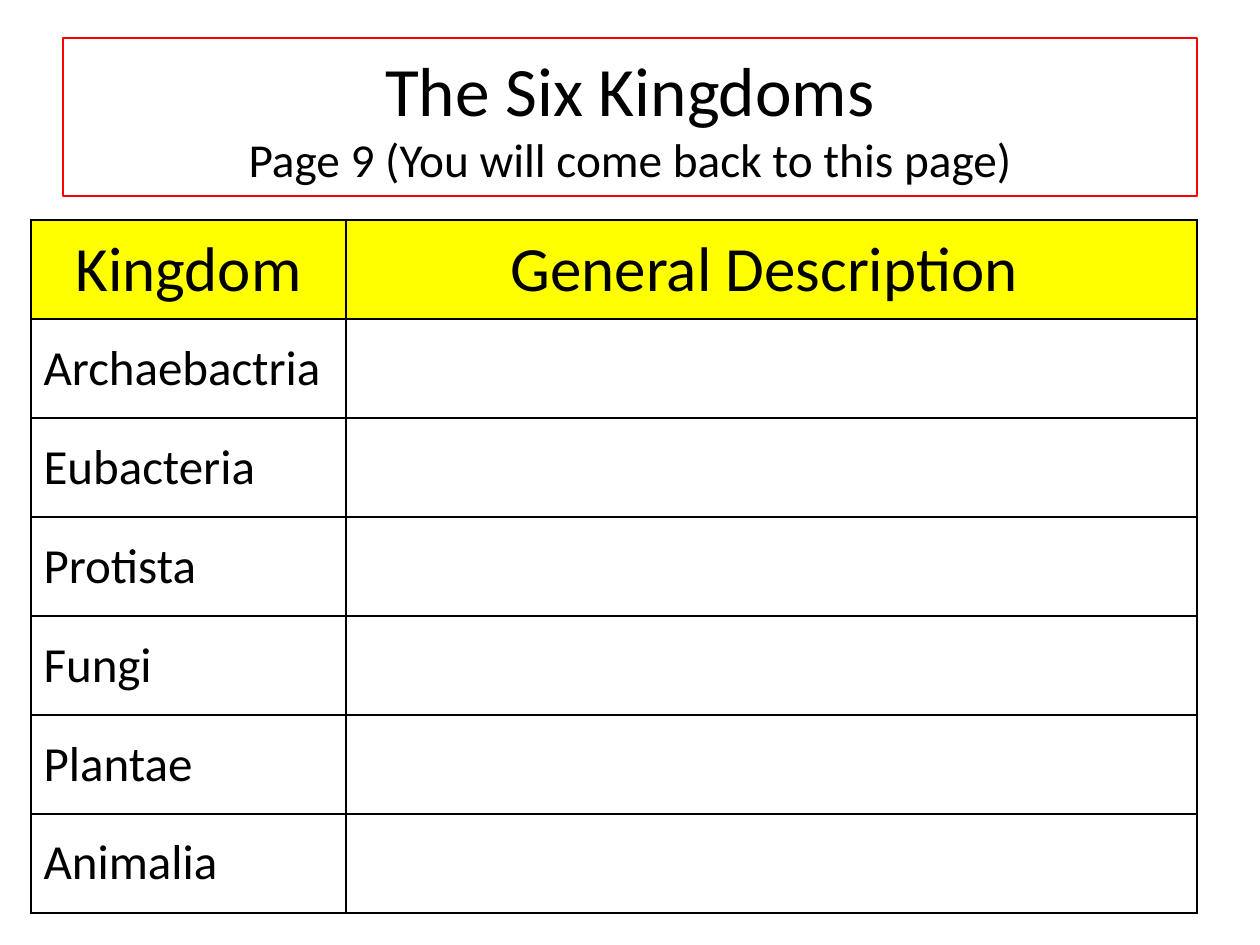
from lxml import etree
from pptx import Presentation
from pptx.dml.color import RGBColor
from pptx.enum.shapes import MSO_SHAPE as Shape
from pptx.enum.text import MSO_ANCHOR as Anchor, PP_ALIGN as Align
from pptx.oxml.ns import qn
from pptx.util import Emu, Pt

EMU_PER_PX = 914400 / 126
COLORS = {"text": "000000", "border": "000000", "frame": "FF0000",
          "header": "FFFF00"}
FONT = "Calibri"
KINGDOMS = ["Archaebactria", "Eubacteria", "Protista",
            "Fungi", "Plantae", "Animalia"]
COLUMN_WIDTHS = [315, 851]
ROW_HEIGHT = 99


def px(length):
    return Emu(round(length * EMU_PER_PX))


def color(name):
    return RGBColor.from_string(COLORS[name])


def add_text(paragraph, text, size, align=Align.LEFT):
    paragraph.alignment = align
    run = paragraph.add_run()
    run.text = text
    run.font.name = FONT
    run.font.size = Pt(size)
    run.font.color.rgb = color("text")


def add_title(slide):
    frame = slide.shapes.add_shape(Shape.RECTANGLE, px(63), px(38),
                                   px(1134), px(158))
    frame.shadow.inherit = False
    frame.fill.background()
    frame.line.color.rgb = color("frame")
    frame.line.width = Pt(0.75)
    text_frame = frame.text_frame
    text_frame.word_wrap = True
    text_frame.vertical_anchor = Anchor.MIDDLE
    heading = text_frame.paragraphs[0]
    add_text(heading, "The Six Kingdoms", size=39.6, align=Align.CENTER)
    heading.add_line_break()
    add_text(heading, "Page 9 (You will come back to this page)", size=27,
             align=Align.CENTER)


def set_borders(cell):
    properties = cell._tc.get_or_add_tcPr()
    for position, side in enumerate(("lnL", "lnR", "lnT", "lnB")):
        border = etree.Element(qn(f"a:{side}"), w=str(Pt(1)))
        fill = etree.SubElement(border, qn("a:solidFill"))
        etree.SubElement(fill, qn("a:srgbClr"), val=COLORS["border"])
        properties.insert(position, border)


def add_kingdom_table(slide):
    rows = [("Kingdom", "General Description ")]
    rows += [(kingdom, "") for kingdom in KINGDOMS]
    table = slide.shapes.add_table(
        len(rows), len(COLUMN_WIDTHS), px(31), px(220),
        px(sum(COLUMN_WIDTHS)), px(ROW_HEIGHT * len(rows))).table
    for column, width in zip(table.columns, COLUMN_WIDTHS):
        column.width = px(width)

    for row_index, labels in enumerate(rows):
        table.rows[row_index].height = px(ROW_HEIGHT)
        is_header = row_index == 0
        for column_index, label in enumerate(labels):
            cell = table.cell(row_index, column_index)
            cell.vertical_anchor = Anchor.MIDDLE
            if is_header:
                cell.fill.solid()
                cell.fill.fore_color.rgb = color("header")
            else:
                cell.fill.background()
            set_borders(cell)
            if label:
                add_text(cell.text_frame.paragraphs[0], label,
                         size=36 if is_header else 28,
                         align=Align.CENTER if is_header else Align.LEFT)


def main():
    deck = Presentation()
    deck.slide_width, deck.slide_height = px(1260), px(945)
    slide = deck.slides.add_slide(deck.slide_layouts[6])
    add_title(slide)
    add_kingdom_table(slide)
    deck.save("out.pptx")


if __name__ == "__main__":
    main()
